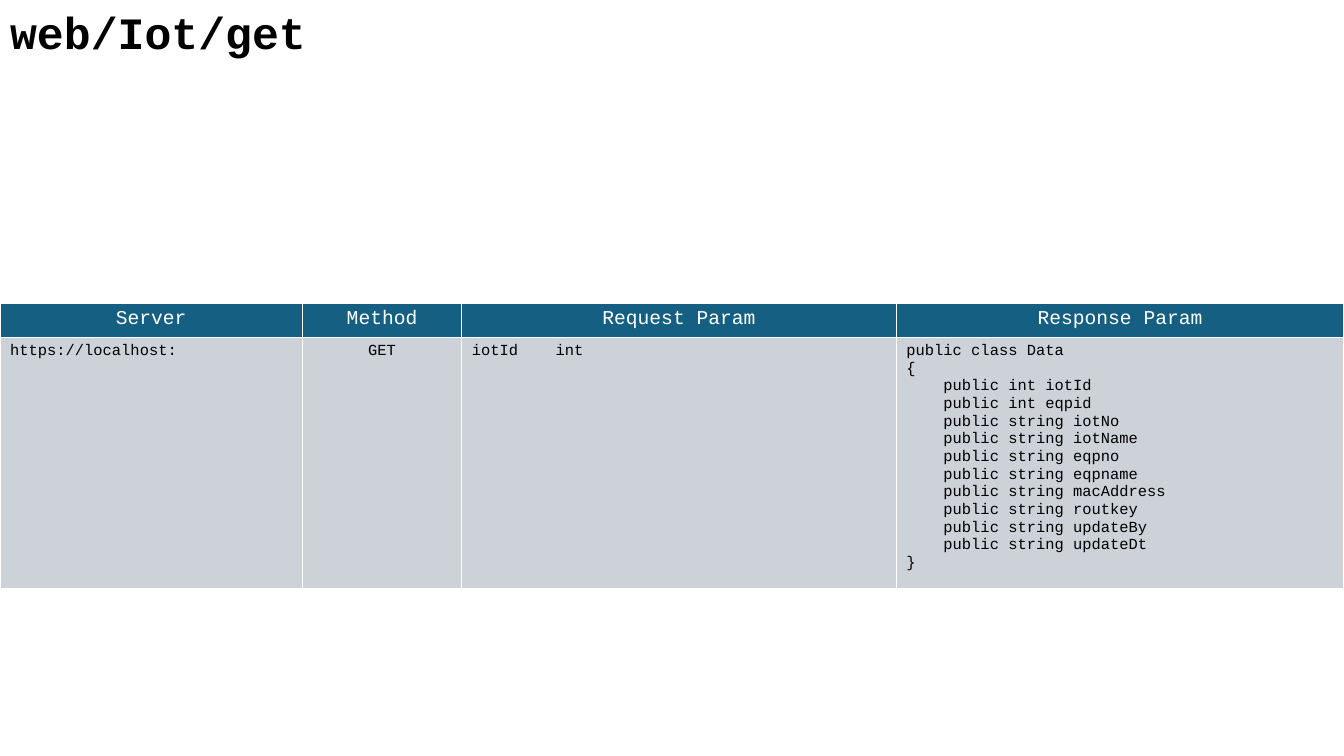
from lxml import etree
from pptx import Presentation
from pptx import util as u
from pptx.dml.color import RGBColor
from pptx.enum import text
from pptx.oxml import ns

WIDTH, HEIGHT = 13.33, 7.5
FONT = "Courier New"
WHITE, BLACK, HEADER, BODY = "FFFFFF", "000000", "156082", "CCD2D8"
LEFT, CENTER = text.PP_ALIGN.LEFT, text.PP_ALIGN.CENTER
ROW_HEIGHTS = (0.34, 2.48)
TYPE_TAB = 0.83

FIELDS = (
    "int iotId", "int eqpid", "string iotNo", "string iotName",
    "string eqpno", "string eqpname", "string macAddress",
    "string routkey", "string updateBy", "string updateDt",
)
RESPONSE = "\n".join(
    ["public class Data", "{"] + [f"    public {field}" for field in FIELDS] + ["}"])

# heading, column width, value, value alignment
COLUMNS = (
    ("Server", 3.0, "https://localhost:", LEFT),
    ("Method", 1.58, "GET", CENTER),
    ("Request Param", 4.31, "iotId\tint", LEFT),
    ("Response Param", 4.44, RESPONSE, LEFT),
)


def rgb(color):
    return RGBColor.from_string(color)


def add_tab_stop(p, inches):
    tabs = etree.SubElement(p._p.get_or_add_pPr(), ns.qn("a:tabLst"))
    etree.SubElement(tabs, ns.qn("a:tab"), pos=str(u.Inches(inches)), algn="l")


def write(tf, content, size, color, align=LEFT, bold=False):
    tf.text = content
    for p in tf.paragraphs:
        if "\t" in p.text:
            add_tab_stop(p, TYPE_TAB)
        p.alignment = align
        p.font.name = FONT
        p.font.size = u.Pt(size)
        p.font.bold = bold
        p.font.color.rgb = rgb(color)


def fill_cell(cell, content, size, color, fill, align):
    write(cell.text_frame, content, size, color, align)
    cell.fill.solid()
    cell.fill.fore_color.rgb = rgb(fill)


def add_title(slide, content, left, top, width, height):
    sp = slide.shapes.title
    sp.left, sp.top, sp.width, sp.height = map(u.Inches, (left, top, width, height))
    tf = sp.text_frame
    tf.vertical_anchor = text.MSO_ANCHOR.TOP
    tf.auto_size = text.MSO_AUTO_SIZE.SHAPE_TO_FIT_TEXT
    write(tf, content, 32, BLACK, bold=True)


def add_api_table(slide, left, top, width):
    box = map(u.Inches, (left, top, width, sum(ROW_HEIGHTS)))
    table = slide.shapes.add_table(len(ROW_HEIGHTS), len(COLUMNS), *box).table
    table.horz_banding = False
    for row, height in zip(table.rows, ROW_HEIGHTS):
        row.height = u.Inches(height)
    for i, (heading, column_width, value, align) in enumerate(COLUMNS):
        table.columns[i].width = u.Inches(column_width)
        fill_cell(table.cell(0, i), heading, 14, WHITE, HEADER, CENTER)
        fill_cell(table.cell(1, i), value, 11, BLACK, BODY, align)


def main():
    prs = Presentation()
    prs.slide_width, prs.slide_height = u.Inches(WIDTH), u.Inches(HEIGHT)
    slide = prs.slides.add_slide(prs.slide_layouts[5])
    add_title(slide, "web/Iot/get", 0, 0, 9.45, 0.64)
    add_api_table(slide, 0, 3.01, WIDTH)
    prs.save("out.pptx")


if __name__ == "__main__":
    main()
